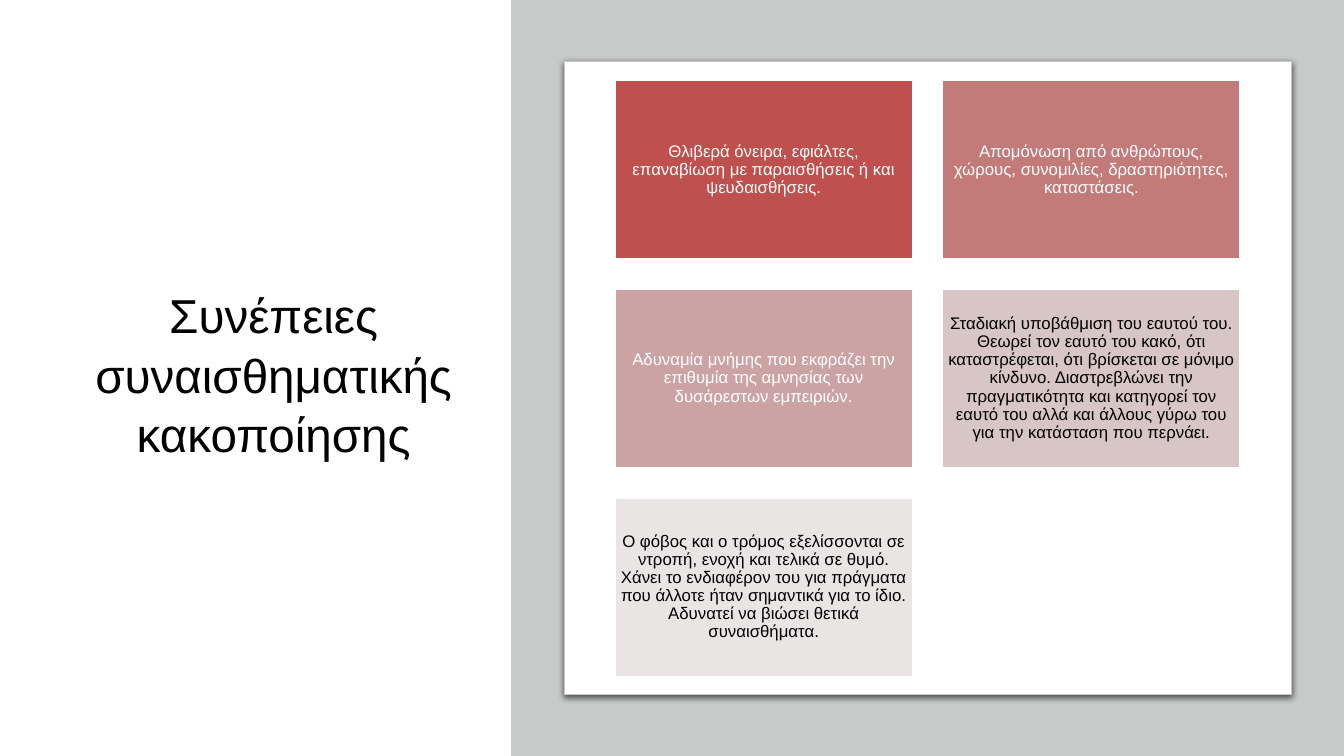
from dataclasses import dataclass

from lxml.etree import SubElement
from pptx import Presentation
from pptx.dml.color import RGBColor
from pptx.enum.shapes import MSO_SHAPE
from pptx.enum.text import MSO_ANCHOR, MSO_AUTO_SIZE, PP_ALIGN
from pptx.oxml.ns import qn
from pptx.shapes.autoshape import Shape
from pptx.slide import Slide
from pptx.util import Inches, Pt


@dataclass(frozen=True)
class Theme:
    font: str = "Arial"
    title_size: float = 34
    card_size: float = 12
    dark: str = "000000"
    light: str = "FFFFFF"
    gray: str = "C8CACA"


@dataclass(frozen=True)
class Area:
    left: float
    top: float
    width: float
    height: float

    def lengths(self) -> tuple[int, ...]:
        return tuple(Inches(n) for n in (self.left, self.top, self.width, self.height))


@dataclass(frozen=True)
class Card:
    text: str
    fill: str
    ink: str


THEME = Theme()
TITLE = "Συνέπειες συναισθηματικής κακοποίησης"
TITLE_AREA = Area(0.71, 0.69, 4.01, 6.02)
BACKDROP_AREA = Area(5.07, 0, 8.26, 7.5)
PANEL_AREA = Area(5.6, 0.61, 7.21, 6.28)
FIRST_CARD_AREA = Area(6.1, 0.8, 2.95, 1.77)
COLUMNS = 2
COLUMN_STEP = 3.25
ROW_STEP = 2.07
CARDS = (
    Card("Θλιβερά όνειρα, εφιάλτες, επαναβίωση με παραισθήσεις ή και "
         "ψευδαισθήσεις.", "C0504D", THEME.light),
    Card("Απομόνωση από ανθρώπους, χώρους, συνομιλίες, δραστηριότητες, "
         "καταστάσεις.", "C37B7A", THEME.light),
    Card("Αδυναμία μνήμης που εκφράζει την επιθυμία της αμνησίας των "
         "δυσάρεστων εμπειριών.", "CBA3A2", THEME.light),
    Card("Σταδιακή υποβάθμιση του εαυτού του. Θεωρεί τον εαυτό του κακό, ότι "
         "καταστρέφεται, ότι βρίσκεται σε μόνιμο κίνδυνο. Διαστρεβλώνει την "
         "πραγματικότητα και κατηγορεί τον εαυτό του αλλά και άλλους γύρω του "
         "για την κατάσταση που περνάει.", "D8C6C6", THEME.dark),
    Card("Ο φόβος και ο τρόμος εξελίσσονται σε ντροπή, ενοχή και τελικά σε θυμό. "
         "Χάνει το ενδιαφέρον του για πράγματα που άλλοτε ήταν σημαντικά για το "
         "ίδιο. Αδυνατεί να βιώσει θετικά συναισθήματα.", "E9E5E5", THEME.dark),
)


def write_centered(box: Shape, text: str, size: float, color: str, spacing: float) -> None:
    frame = box.text_frame
    frame.text = text
    frame.word_wrap = True
    frame.auto_size = MSO_AUTO_SIZE.NONE
    frame.vertical_anchor = MSO_ANCHOR.MIDDLE
    para = frame.paragraphs[0]
    para.alignment = PP_ALIGN.CENTER
    para.line_spacing = spacing
    para.font.name = THEME.font
    para.font.size = Pt(size)
    para.font.color.rgb = RGBColor.from_string(color)


def add_block(page: Slide, area: Area, fill: str, line: str | None = None,
              line_width: float = 1, kind: MSO_SHAPE = MSO_SHAPE.RECTANGLE) -> Shape:
    block = page.shapes.add_shape(kind, *area.lengths())
    block.shadow.inherit = False
    block.fill.solid()
    block.fill.fore_color.rgb = RGBColor.from_string(fill)
    if line is None:
        block.line.fill.background()
    else:
        block.line.color.rgb = RGBColor.from_string(line)
        block.line.width = Pt(line_width)
    return block


def cast_shadow(block: Shape) -> None:
    effects = block._element.spPr.find(qn("a:effectLst"))
    shadow = SubElement(effects, qn("a:outerShdw"), blurRad=str(Pt(4.5)),
                        dist=str(Pt(1.5)), dir="5400000", algn="ctr", rotWithShape="0")
    color = SubElement(shadow, qn("a:srgbClr"), val=THEME.dark)
    SubElement(color, qn("a:alpha"), val="63000")


def add_title(page: Slide) -> None:
    title = page.shapes.title
    title.left, title.top, title.width, title.height = TITLE_AREA.lengths()
    write_centered(title, TITLE, THEME.title_size, THEME.dark, spacing=1.04)


def add_panel(page: Slide) -> None:
    add_block(page, BACKDROP_AREA, THEME.gray)
    panel = add_block(page, PANEL_AREA, THEME.light, THEME.gray, 0.75,
                      MSO_SHAPE.ROUNDED_RECTANGLE)
    panel.adjustments[0] = 0
    cast_shadow(panel)


def add_card(page: Slide, index: int, card: Card) -> None:
    row, column = divmod(index, COLUMNS)
    first = FIRST_CARD_AREA
    area = Area(first.left + column * COLUMN_STEP, first.top + row * ROW_STEP,
                first.width, first.height)
    box = add_block(page, area, card.fill, THEME.light)
    frame = box.text_frame
    frame.margin_left = frame.margin_right = Inches(0.05)
    frame.margin_top = frame.margin_bottom = Inches(0.05)
    write_centered(box, card.text, THEME.card_size, card.ink, spacing=0.9)


def main() -> None:
    deck = Presentation()
    deck.slide_width, deck.slide_height = Inches(13.33), Inches(7.5)
    page = deck.slides.add_slide(deck.slide_layouts.get_by_name("Title Only"))
    add_title(page)
    add_panel(page)
    for index, card in enumerate(CARDS):
        add_card(page, index, card)
    deck.save("out.pptx")


if __name__ == "__main__":
    main()
